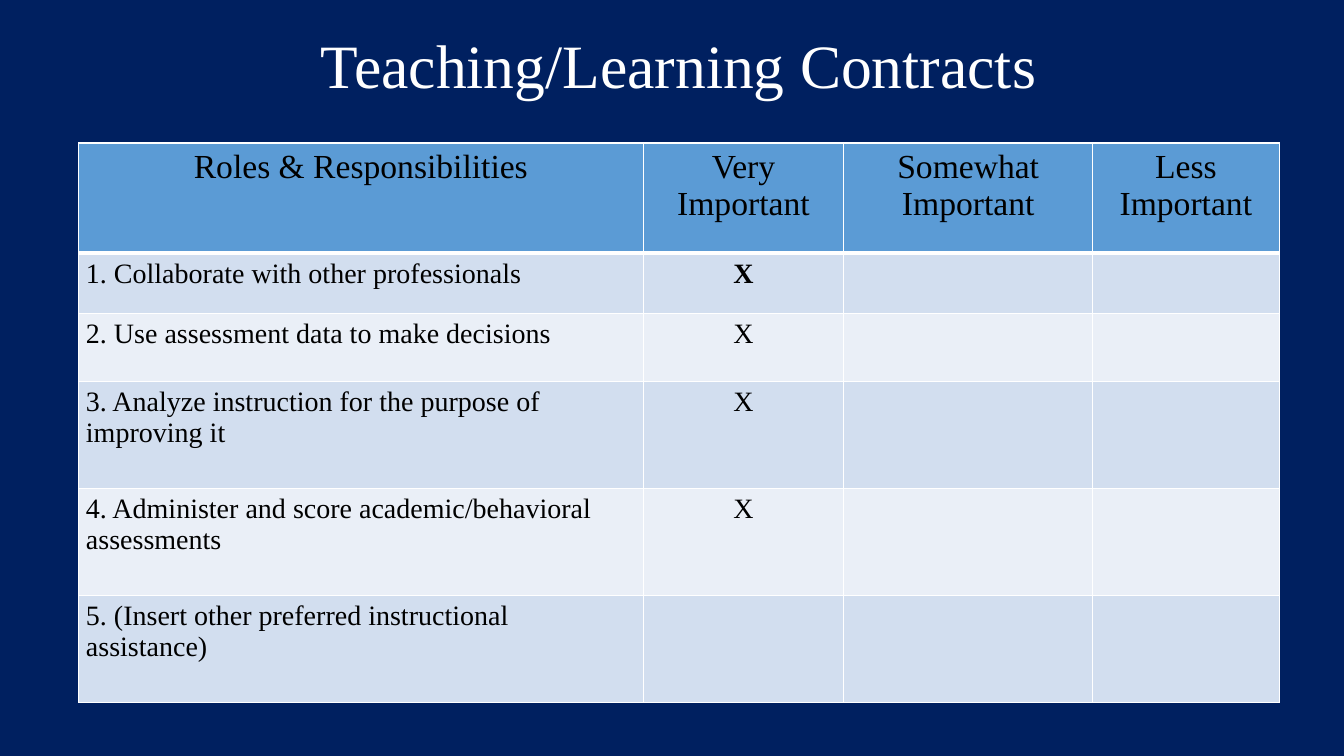
"""Build the Teaching/Learning Contracts slide with its table of responsibilities."""
from lxml import etree
from pptx import Presentation
from pptx.dml.color import RGBColor
from pptx.enum.text import MSO_ANCHOR, PP_ALIGN
from pptx.oxml.ns import qn
from pptx.util import Pt

LEFT, CENTER = PP_ALIGN.LEFT, PP_ALIGN.CENTER
MIDDLE = MSO_ANCHOR.MIDDLE
FONT = "Times New Roman"
COLORS = {
    "background": "002060",
    "white": "FFFFFF",
    "text": "000000",
    "header": "5B9BD5",
    "odd": "D2DEEF",
    "even": "EAEFF7",
}
COLUMN_WIDTHS = [403.2, 143.3, 177.8, 133.2]
ROW_HEIGHTS = [78.5, 43.2, 48.7, 76.4, 76.4, 76.4]
ROWS = [
    ["Roles & Responsibilities", "Very Important", "Somewhat Important", "Less Important"],
    ["1. Collaborate with other professionals", "X", "", ""],
    ["2. Use assessment data to make decisions", "X", "", ""],
    ["3. Analyze instruction for the purpose of improving it", "X", "", ""],
    ["4. Administer and score academic/behavioral assessments", "X", "", ""],
    ["5. (Insert other preferred instructional assistance)", "", "", ""],
]


def write_text(frame, text, size=20, color="text", align=LEFT, bold=False):
    paragraph = frame.paragraphs[0]
    paragraph.alignment = align
    run = paragraph.add_run()
    run.text = text
    run.font.name = FONT
    run.font.size = Pt(size)
    run.font.bold = bold
    run.font.color.rgb = RGBColor.from_string(COLORS[color])


def set_borders(cell, widths):
    properties = cell._tc.get_or_add_tcPr()
    for position, (side, width) in enumerate(widths.items()):
        line = etree.Element(qn("a:" + side), w=str(Pt(width)))
        fill = etree.SubElement(line, qn("a:solidFill"))
        etree.SubElement(fill, qn("a:srgbClr"), val=COLORS["white"])
        properties.insert(position, line)


presentation = Presentation()
presentation.slide_width = Pt(960)
presentation.slide_height = Pt(540)
slide = presentation.slides.add_slide(presentation.slide_layouts[5])
slide.background.fill.solid()
slide.background.fill.fore_color.rgb = RGBColor.from_string(COLORS["background"])

title = slide.shapes.title
title.left, title.top, title.width, title.height = Pt(56.2), Pt(18.7), Pt(857.5), Pt(61.2)
title.text_frame.vertical_anchor = MIDDLE
write_text(title.text_frame, "Teaching/Learning Contracts", size=44, color="white", align=CENTER)
title.text_frame.paragraphs[0].line_spacing = 0.9

table = slide.shapes.add_table(
    len(ROWS), len(COLUMN_WIDTHS), Pt(56.2), Pt(102.2),
    Pt(sum(COLUMN_WIDTHS)), Pt(sum(ROW_HEIGHTS)),
).table
for column, width in zip(table.columns, COLUMN_WIDTHS):
    column.width = Pt(width)
for row, height in zip(table.rows, ROW_HEIGHTS):
    row.height = Pt(height)

for row_index, texts in enumerate(ROWS):
    is_header = row_index == 0
    fill_name = "header" if is_header else ("even", "odd")[row_index % 2]
    for column_index, text in enumerate(texts):
        cell = table.cell(row_index, column_index)
        cell.fill.solid()
        cell.fill.fore_color.rgb = RGBColor.from_string(COLORS[fill_name])
        cell.margin_left = cell.margin_right = Pt(5.2)
        cell.margin_top = cell.margin_bottom = Pt(3.6)
        set_borders(cell, {
            "lnL": 1,
            "lnR": 1,
            "lnT": 3 if row_index == 1 else 1,
            "lnB": 3 if is_header else 1,
        })
        if text:
            write_text(
                cell.text_frame, text,
                size=24 if is_header else 20,
                align=CENTER if is_header or column_index else LEFT,
                bold=row_index == 1 and column_index == 1,
            )

presentation.save("out.pptx")
